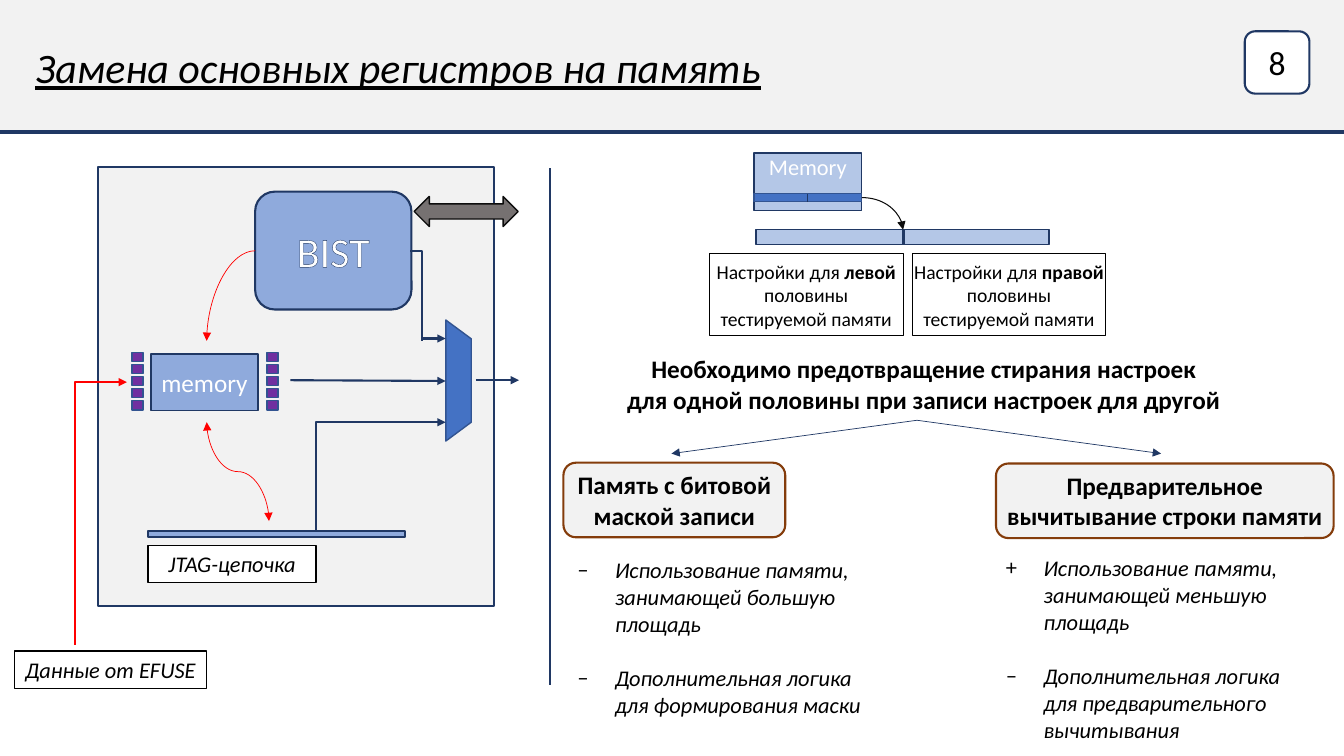
from lxml import etree
from pptx import Presentation
from pptx.dml.color import RGBColor
from pptx.enum.shapes import MSO_CONNECTOR, MSO_SHAPE
from pptx.enum.text import MSO_ANCHOR, PP_ALIGN
from pptx.oxml.ns import qn
from pptx.util import Cm, Pt

RECT, ROUND = MSO_SHAPE.RECTANGLE, MSO_SHAPE.ROUNDED_RECTANGLE
TRAPEZOID, DOUBLE_ARROW = MSO_SHAPE.TRAPEZOID, MSO_SHAPE.LEFT_RIGHT_ARROW
STRAIGHT, ELBOW, CURVE = MSO_CONNECTOR.STRAIGHT, MSO_CONNECTOR.ELBOW, MSO_CONNECTOR.CURVE
TOP, MIDDLE = MSO_ANCHOR.TOP, MSO_ANCHOR.MIDDLE
LEFT, CENTER = PP_ALIGN.LEFT, PP_ALIGN.CENTER

THEME = {
    "font": "Calibri",
    "colors": {
        "black": "000000", "white": "FFFFFF", "panel": "F2F2F2", "navy": "203864",
        "brown": "843C0B", "block": "8FAADC", "pale": "B4C7E7", "blue": "4472C4",
        "edge": "325491", "purple": "7030A0", "red": "FF0000", "gray": "767171", "ink": "0D0D0D",
    },
    "text": {
        "title": {"size": Pt(30), "italic": True, "underline": True},
        "number": {"size": Pt(24)},
        "card": {"size": Pt(18), "bold": True},
        "block": {"size": Pt(30), "color": "white"},
        "memory": {"size": Pt(18), "color": "white"},
        "small_memory": {"size": Pt(16), "color": "white"},
        "label": {"size": Pt(16), "italic": True},
        "setting": {"size": Pt(14)},
    },
}

TITLE = "Замена основных регистров на память"
TITLE_BOX = (0.64, 0.91, 29.26, 1.55)
HEADER = (RECT, (-0.2, -0.2, 34.39, 3.53), "panel", "navy", 3)

CARDS = [
    (ROUND, (25.1, 11.68, 8.51, 1.88), "panel", "brown", 1.5,
     "Предварительное вычитывание строки памяти", "card"),
    (ROUND, (14.2, 11.66, 5.59, 1.88), "panel", "brown", 1.5,
     "Память с битовой маской записи", "card"),
    (ROUND, (31.37, 0.79, 1.63, 1.57), "white", "navy", 1.5, "8", "number"),
]
CIRCUIT = [
    (RECT, (2.46, 4.22, 9.98, 11.05), "panel", "navy", 1.5),
    (ROUND, (6.43, 4.83, 3.94, 2.97), "block", "navy", 1.5, "BIST", "block"),
    (RECT, (3.73, 13.39, 6.48, 0.15), "block", "navy", 1.5),
    (DOUBLE_ARROW, (10.44, 4.95, 2.62, 0.76), "gray", "ink", 1),
    (RECT, (3.73, 13.74, 4.24, 0.94), "white", "black", 1, "JTAG-цепочка", "label"),
    (RECT, (0.36, 16.41, 4.85, 0.94), None, "black", 1, "Данные от EFUSE", "label"),
    (RECT, (3.81, 8.92, 2.69, 1.42), "block", "navy", 1, "memory", "memory"),
]
MULTIPLEXER = (TRAPEZOID, (10.03, 9.27, 3.05, 0.64), "blue", "edge", 1)
REGISTER_COLUMNS = (6.73, 3.33)
REGISTER_COUNT, REGISTER_TOP, REGISTER_PITCH = 5, 8.88, 0.305
REGISTER_SIZE = (0.28, 0.23)

SETTINGS = [
    (RECT, (19.05, 5.79, 7.39, 0.38), "pale", "navy", 1),
    (RECT, (19, 3.86, 2.72, 1.45), "pale", "navy", 1, "Memory", "small_memory", TOP),
    (RECT, (19, 4.88, 2.72, 0.2), "blue", "edge", 1),
]
HALVES = [(17.88, "левой"), (22.99, "правой")]

CONNECTORS = [
    ("line", (13.87, 4.24), (13.87, 17.25), "navy", 1.5, ""),
    ("line", (23.11, 10.59), (16.92, 11.43), "navy", 0.5, "tail"),
    ("line", (23.11, 10.59), (29.26, 11.43), "navy", 0.5, "tail"),
    ("line", (11.99, 9.58), (13.08, 9.58), "navy", 1.5, "tail"),
    ("line", (10.64, 8.53), (11.23, 8.53), "navy", 1.5, "tail"),
    ("line", (7.32, 9.58), (11.23, 9.6), "navy", 1.5, "tail"),
    ("line", (10.64, 10.64), (11.23, 10.64), "navy", 1.5, "tail"),
    ("bentConnector2", (10.34, 6.32), (10.64, 8.59), "navy", 1.5, ""),
    ("bentConnector2", (10.67, 10.64), (7.97, 13.41), "navy", 1.5, ""),
    ("bentConnector2", (3.2, 9.63), (1.9, 16.26), "red", 1.5, "head"),
    ("curvedConnector2", (6.43, 6.32), (5.21, 8.59), "red", 0.5, "tail"),
    ("curvedConnector3", (7.24, 11.1), (4.75, 12.67), "red", 0.5, "head tail", 270),
    ("line", (22.76, 5.79), (22.76, 6.17), "navy", 2.25, ""),
    ("curvedConnector2", (21.72, 4.98), (22.76, 5.79), "ink", 0.75, "tail"),
    ("line", (20.35, 4.88), (20.35, 5.08), "navy", 1, ""),
]
PROBLEM_BOX = (14.81, 8.79, 16.94, 2.57)
PROBLEM = [
    "Необходимо предотвращение стирания настроек",
    "для одной половины при записи настроек для другой",
]
OPINIONS = [
    ((14.3, 13.89, 8.23, 5.1), [
        ("‒", "Использование памяти, занимающей большую площадь"),
        ("‒", "Дополнительная логика для формирования маски")]),
    ((25.1, 13.84, 8.23, 5.1), [
        ("+", "Использование памяти, занимающей меньшую площадь"),
        ("‒", "Дополнительная логика для предварительного вычитывания")]),
]


def rgb(name):
    return RGBColor.from_string(THEME["colors"][name])


def lengths(values):
    return [Cm(value) for value in values]


def write_paragraph(paragraph, text, style, align):
    paragraph.alignment = align
    for index, part in enumerate(text.split("*")):
        run = paragraph.add_run()
        run.text = part
        formats = {"name": THEME["font"], **THEME["text"][style]}
        color = formats.pop("color", "black")
        if index % 2:
            formats["bold"] = True
        for key, value in formats.items():
            setattr(run.font, key, value)
        run.font.color.rgb = rgb(color)


def add_box(slide, kind, box, fill, line, width, text=None, style=None, anchor=MIDDLE):
    shape = slide.shapes.add_shape(kind, *lengths(box))
    shape.shadow.inherit = False
    if fill:
        shape.fill.solid()
        shape.fill.fore_color.rgb = rgb(fill)
    else:
        shape.fill.background()
    shape.line.color.rgb = rgb(line)
    shape.line.width = Pt(width)
    if text:
        frame = shape.text_frame
        formats = {"word_wrap": True, "vertical_anchor": anchor, "margin_left": 0,
                   "margin_right": 0, "margin_top": 0, "margin_bottom": 0}
        for key, value in formats.items():
            setattr(frame, key, value)
        write_paragraph(frame.paragraphs[0], text, style, CENTER)
    return shape


def add_text(slide, box, lines, style, align):
    frame = slide.shapes.add_textbox(*lengths(box)).text_frame
    frame.word_wrap = True
    for index, line in enumerate(lines):
        paragraph = frame.add_paragraph() if index else frame.paragraphs[0]
        write_paragraph(paragraph, line, style, align)
    return frame


def add_opinions(slide, box, items):
    frame = add_text(slide, box, [text for _, text in items], "label", LEFT)
    for index, (paragraph, (mark, _)) in enumerate(zip(frame.paragraphs, items)):
        paragraph.space_before = Pt(19.5 * index)
        properties = paragraph._p.get_or_add_pPr()
        properties.set("marL", str(Cm(0.95)))
        properties.set("indent", str(-Cm(0.95)))
        etree.SubElement(properties, qn("a:buFont")).set("typeface", THEME["font"])
        etree.SubElement(properties, qn("a:buChar")).set("char", mark)


def add_link(slide, geometry, begin, end, color, width, arrows, rotation=0):
    kind = {"l": STRAIGHT, "b": ELBOW, "c": CURVE}[geometry[0]]
    connector = slide.shapes.add_connector(kind, *lengths(begin + end))
    connector.line.color.rgb = rgb(color)
    connector.line.width = Pt(width)
    properties = connector.element.spPr
    properties.find(qn("a:prstGeom")).set("prst", geometry)
    if rotation:
        properties.find(qn("a:xfrm")).set("rot", str(rotation * 60000))
    for arrow in arrows.split():
        etree.SubElement(properties.find(qn("a:ln")), qn(f"a:{arrow}End")).set("type", "triangle")
    etree.SubElement(properties, qn("a:effectLst"))


def add_title(slide):
    header = add_box(slide, *HEADER)
    title = slide.shapes.title
    title.left, title.top, title.width, title.height = lengths(TITLE_BOX)
    title.text_frame.vertical_anchor = MIDDLE
    write_paragraph(title.text_frame.paragraphs[0], TITLE, "title", LEFT)
    header.element.addnext(title.element)


def outline_text(shape):
    properties = shape.text_frame.paragraphs[0].runs[0].font._element
    line = etree.Element(qn("a:ln"), w=str(Pt(0.75)))
    fill = etree.SubElement(line, qn("a:solidFill"))
    etree.SubElement(fill, qn("a:srgbClr")).set("val", THEME["colors"]["navy"])
    properties.insert(0, line)


def main():
    presentation = Presentation()
    presentation.slide_width, presentation.slide_height = Cm(33.87), Cm(19.05)
    slide = presentation.slides.add_slide(presentation.slide_layouts[5])
    add_title(slide)
    for box in CARDS + CIRCUIT + SETTINGS:
        shape = add_box(slide, *box)
        if "BIST" in box:
            outline_text(shape)
    multiplexer = add_box(slide, *MULTIPLEXER)
    multiplexer.rotation = 90
    multiplexer.adjustments[0] = 0.74
    for left in REGISTER_COLUMNS:
        for row in range(REGISTER_COUNT):
            top = REGISTER_TOP + row * REGISTER_PITCH
            add_box(slide, RECT, (left, top, *REGISTER_SIZE), "purple", "edge", 1)
    for left, half in HALVES:
        add_box(slide, RECT, (left, 6.4, 4.88, 2.06), None, "black", 0.75,
                f"Настройки для *{half}* половины тестируемой памяти", "setting")
    for link in CONNECTORS:
        add_link(slide, *link)
    add_text(slide, PROBLEM_BOX, PROBLEM, "card", CENTER)
    for box, items in OPINIONS:
        add_opinions(slide, box, items)
    presentation.save("out.pptx")


if __name__ == "__main__":
    main()
